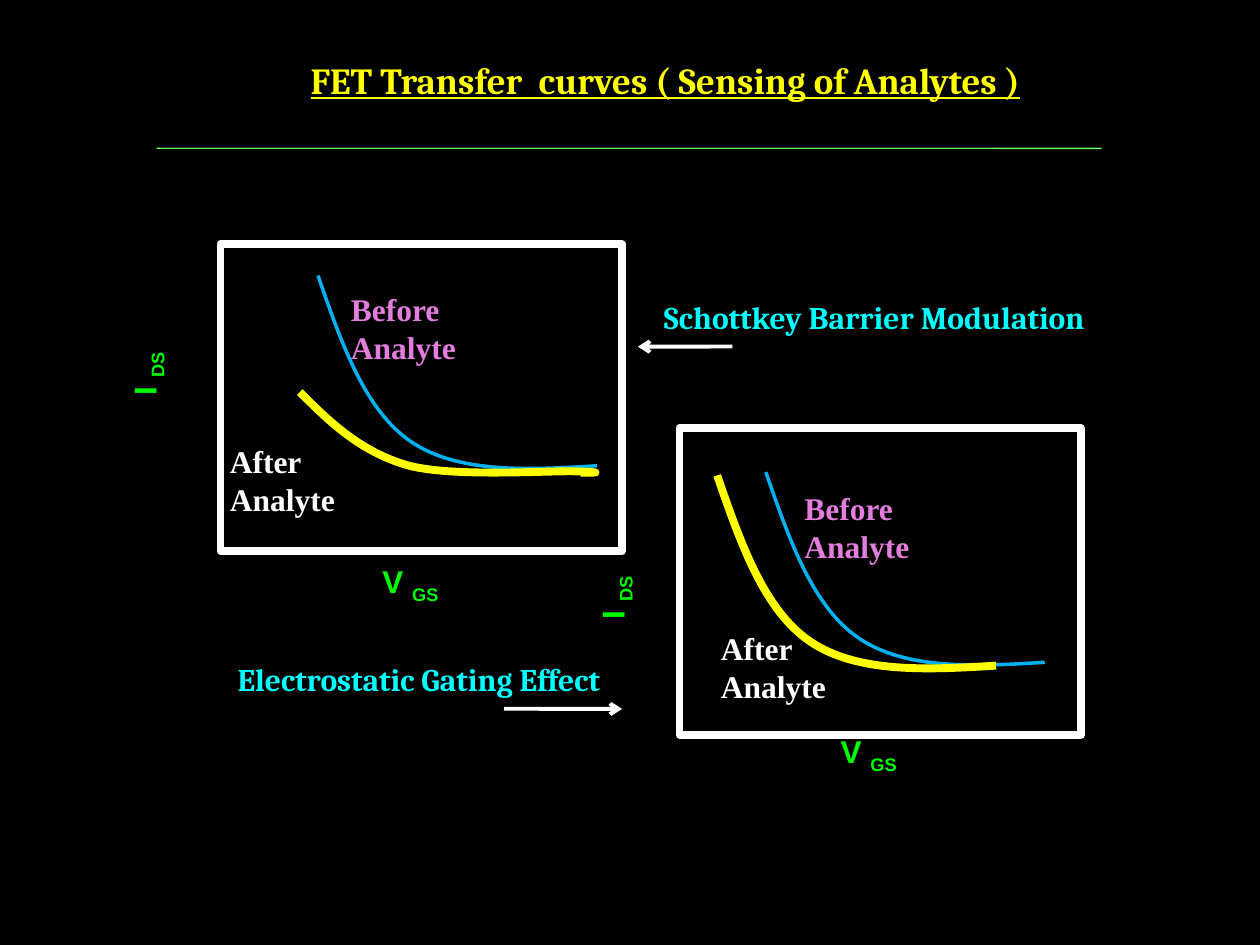
from lxml.etree import SubElement
from pptx import Presentation
from pptx.dml.color import RGBColor
from pptx.enum.shapes import MSO_CONNECTOR, MSO_SHAPE
from pptx.enum.text import PP_ALIGN
from pptx.oxml.ns import qn
from pptx.util import Pt

BLACK, WHITE, YELLOW, BLUE = "000000", "FFFFFF", "FFFF00", "00B0F0"
GREEN, RULE_GREEN, CYAN, PINK = "00FF00", "66FF66", "00FFFF", "E37DDE"

FRAME_SIZE = (229.5, 175.5)
# Bezier control points relative to the start of the curve
STEEP = [(0, 0), (13.3, 38.3), (26.6, 77), (53.3, 95),
         (80, 113), (119.5, 111.2), (159.4, 108.7)]
SHALLOW = [(0, 0), (17.2, 17.3), (34.5, 33.9), (61.2, 41.8),
           (87.1, 49), (142.5, 44.7), (159.1, 45.4),
           (175.6, 46.1), (168.4, 46.1), (160.5, 46.1)]

# Positions are left, top in points
PLOTS = [
    {"frame": (126, 139.5), "before": (181.7, 157.5),
     "after": (171.3, 224), "after_curve": SHALLOW,
     "before_label": (193.5, 162), "after_label": (124.3, 249),
     "x_label": (211.5, 317.5, 72, 28.8), "y_label": (69.8, 190.8)},
    {"frame": (388.3, 244.5), "before": (437.6, 269.8),
     "after": (409.8, 271.7), "after_curve": STEEP,
     "before_label": (452.6, 276.1), "after_label": (404.9, 355.8),
     "x_label": (473.3, 414.8, 63.4, 28.8), "y_label": (337.3, 318.8)},
]
# text, box, size, colour, underlined
HEADINGS = [
    ("FET Transfer  curves ( Sensing of Analytes )",
     (131, 29.5, 498.2, 32.4), 21, YELLOW, True),
    ("Schottkey Barrier Modulation", (352, 166.6, 295.2, 28.8), 18, CYAN, False),
    ("Electrostatic Gating Effect ", (109.3, 373.7, 264.2, 28.8), 18, CYAN, False),
]
# start, end, colour, width, arrowhead
LINES = [
    ((89.5, 84.7), (629.5, 84.8), RULE_GREEN, 0.75, False),
    ((418.5, 198), (364.5, 198.1), WHITE, 2.25, True),
    ((288, 405), (355.5, 405.1), WHITE, 2.25, True),
]


def rgb(colour):
    return RGBColor.from_string(colour)


def style_line(shape, colour, width):
    shape.line.color.rgb = rgb(colour)
    shape.line.width = Pt(width)


def style_outline(shape, colour, width):
    """Unfilled shape with a round-joined line."""
    shape.shadow.inherit = False
    shape.fill.background()
    style_line(shape, colour, width)
    SubElement(shape.line._get_or_add_ln(), qn("a:round"))


def add_curve(shapes, origin, controls, colour, width):
    """Build the control polygon, then turn each three points into one Bezier."""
    points = [(Pt(origin[0] + x), Pt(origin[1] + y)) for x, y in controls]
    builder = shapes.build_freeform(*points[0])
    builder.add_line_segments(points[1:], close=False)
    curve = builder.convert_to_shape()
    outline = next(curve._element.iter(qn("a:path")))
    segments = outline.findall(qn("a:lnTo"))
    for i in range(0, len(segments), 3):
        bezier = SubElement(outline, qn("a:cubicBezTo"))
        for segment in segments[i:i + 3]:
            bezier.append(segment[0])
            outline.remove(segment)
    style_outline(curve, colour, width)


def add_plot(slide, plot):
    shapes = slide.shapes.add_group_shape().shapes
    add_curve(shapes, plot["before"], STEEP, BLUE, 2)
    add_curve(shapes, plot["after"], plot["after_curve"], YELLOW, 4.5)
    frame = shapes.add_shape(MSO_SHAPE.RECTANGLE, *map(Pt, plot["frame"] + FRAME_SIZE))
    style_outline(frame, WHITE, 4.25)


def add_text(slide, text, box, font_name, colour, size=18, wrap=True):
    textbox = slide.shapes.add_textbox(*map(Pt, box))
    textbox.text_frame.word_wrap = wrap
    paragraph = textbox.text_frame.paragraphs[0]
    paragraph.add_run().text = text
    font = paragraph.font
    font.name, font.size, font.bold = font_name, Pt(size), True
    font.color.rgb = rgb(colour)
    return textbox, paragraph


def add_axis_label(slide, symbol, subscript, box, rotation=0):
    textbox, paragraph = add_text(slide, symbol + " ", box, "Arial", GREEN)
    textbox.rotation = rotation
    run = paragraph.add_run()
    run.text = subscript
    run._r.get_or_add_rPr().set("baseline", "-25000")


def add_labels(slide, plot):
    add_axis_label(slide, "V", "GS", plot["x_label"])
    add_axis_label(slide, "I", "DS", plot["y_label"] + (40.3, 44), 270)
    for text, place, colour in (("Before Analyte", "before_label", PINK),
                                ("After Analyte", "after_label", WHITE)):
        add_text(slide, text, plot[place] + (108, 51), "Times New Roman", colour)


def add_line(slide, start, end, colour, width, arrowhead):
    line = slide.shapes.add_connector(MSO_CONNECTOR.STRAIGHT, *map(Pt, start + end))
    style_line(line, colour, width)
    if arrowhead:
        SubElement(line.line._get_or_add_ln(), qn("a:tailEnd"), type="arrow")
    SubElement(line._element.spPr, qn("a:effectLst"))


def main():
    presentation = Presentation()
    presentation.slide_width, presentation.slide_height = Pt(720), Pt(540)
    slide = presentation.slides.add_slide(presentation.slide_layouts[6])
    slide.background.fill.solid()
    slide.background.fill.fore_color.rgb = rgb(BLACK)

    for plot in PLOTS:
        add_plot(slide, plot)
    for line in LINES:
        add_line(slide, *line)
    for text, box, size, colour, underlined in HEADINGS:
        _, paragraph = add_text(slide, text, box, "Cambria", colour, size, wrap=False)
        paragraph.alignment = PP_ALIGN.CENTER
        if underlined:
            paragraph.font.underline = True
    for plot in PLOTS:
        add_labels(slide, plot)

    presentation.save("out.pptx")


if __name__ == "__main__":
    main()
